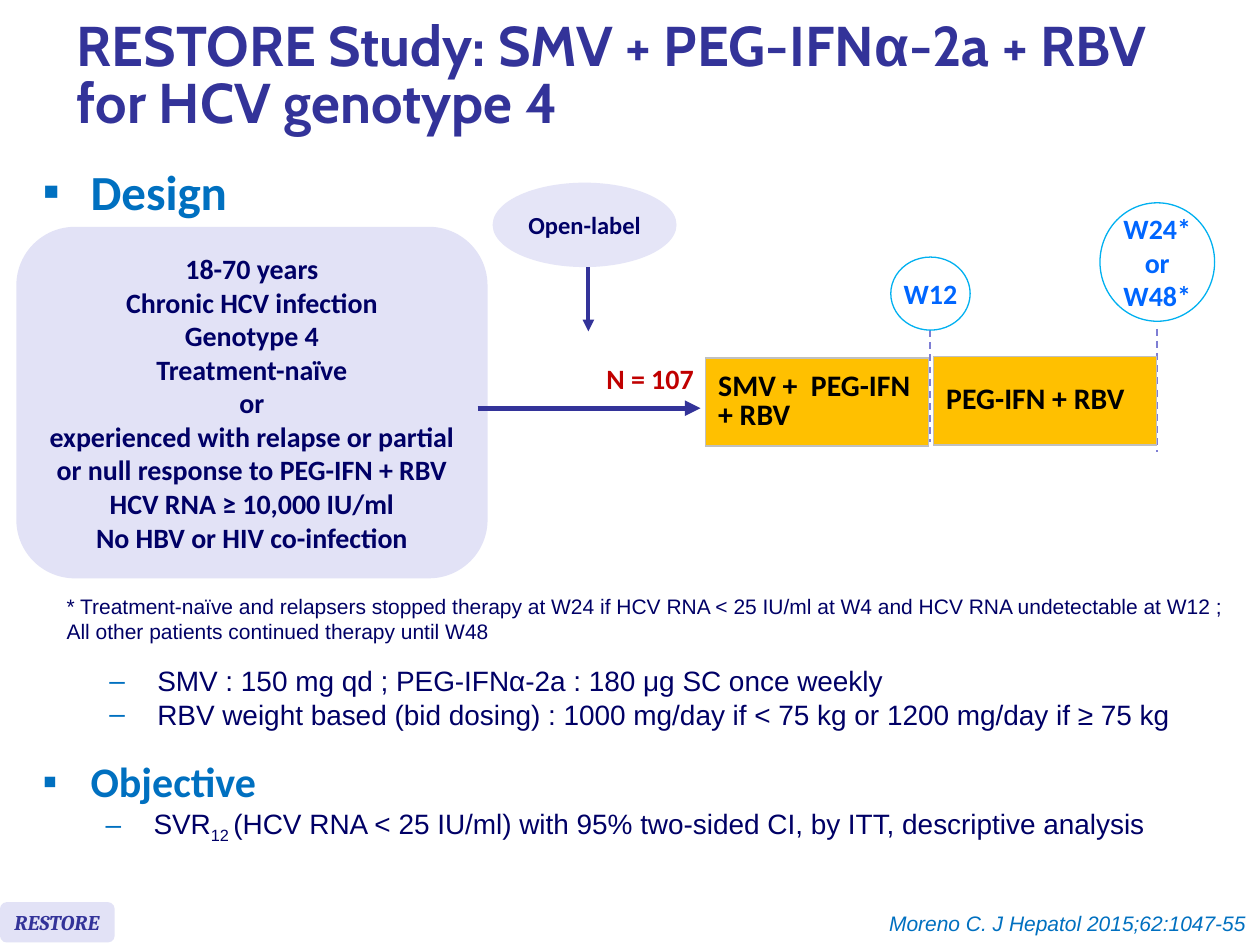
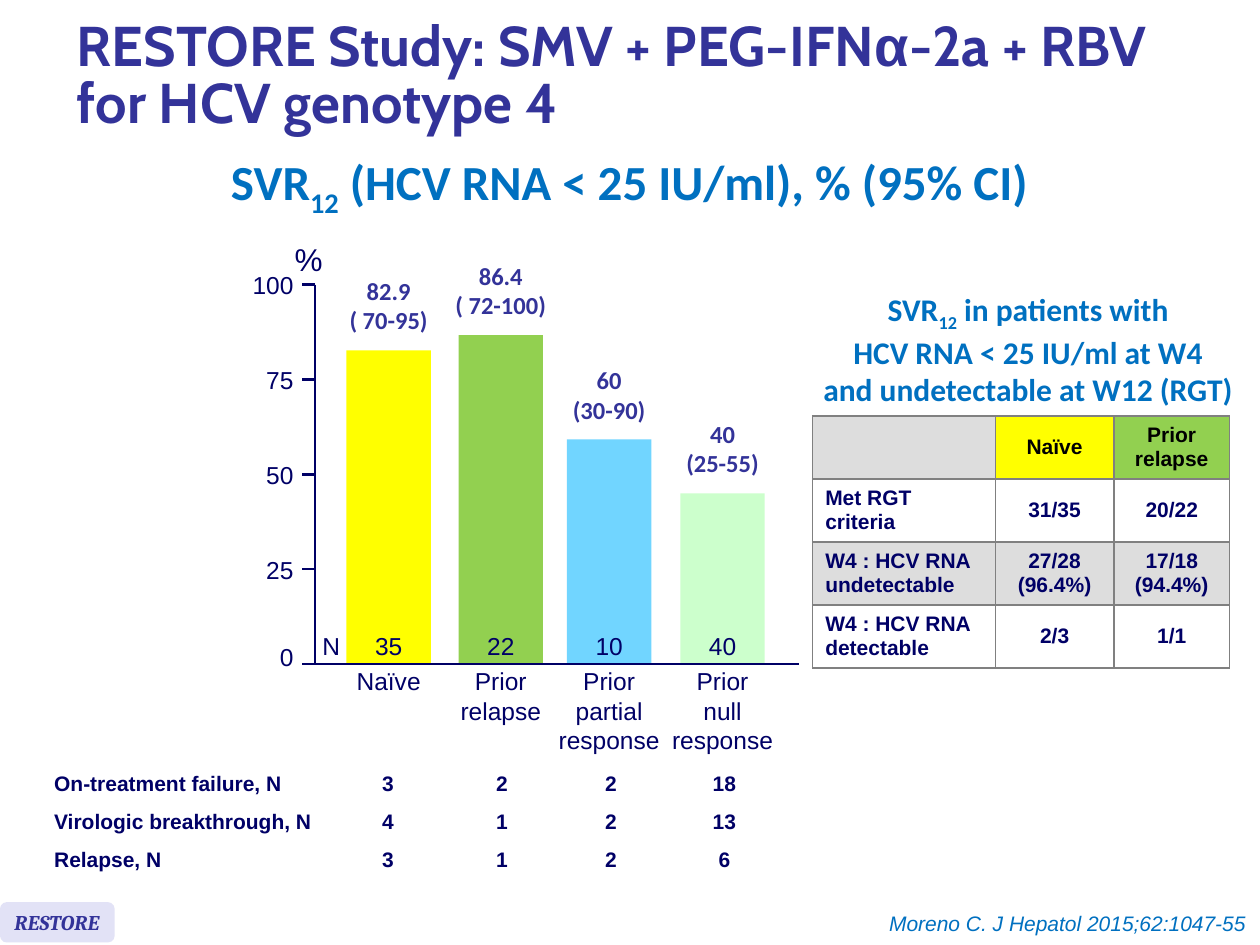
"""Build two slides on the RESTORE study: its design and its SVR12 results."""
import pptx
import pptx.dml.color
import pptx.enum.dml
import pptx.enum.shapes
import pptx.enum.text
import pptx.oxml
import pptx.oxml.ns
import pptx.util

COLORS = {
    "indigo": "333399", "navy": "000066", "blue": "0070C0", "bright": "0066FF", "cyan": "00B0F0",
    "dash": "7E7ED4", "lavender": "E2E2F6", "pale": "E5E5F7", "amber": "FFC000", "red": "C00000",
    "yellow": "FFFF00", "green": "92D050", "sky": "71D5FF", "mint": "CCFFCC", "silver": "C0C0C0",
    "grey": "808080", "light": "DDDDDD", "white": "FFFFFF", "black": "000000",
}
UNIT = pptx.util.Inches(0.1)
SLIDE_COLUMNS, SLIDE_ROWS = 100, 75
SUBSCRIPT = {"baseline": -25}
BODY = {"size": 16, "font": "Arial", "color": "navy"}
SMALL = {**BODY, "size": 12}
AXIS_TEXT = {**BODY, "size": 14}
STRONG = {"size": 16, "font": "Calibri", "bold": True}
HEADING = {**STRONG, "color": "blue"}
SQUARE_BULLET = {"bullet": "▪", "indent": 3.8}
DASH_BULLET = {"bullet": "–", "indent": 8.8, "level": 1}

TITLE = [["RESTORE Study: SMV + PEG-IFN", ("α", {"font": "Arial"}), "-2a + RBV for HCV genotype 4"]]
STUDY_TAG = ["RESTORE"]
REFERENCE = ["Moreno C. J Hepatol 2015;62:1047-55"]

POPULATION = [
    "18-70 years", "Chronic HCV infection", "Genotype 4", "Treatment-naïve", "or",
    "experienced with relapse or partial", "or null response to PEG-IFN + RBV",
    "HCV RNA ≥ 10,000 IU/ml", "No HBV or HIV co-infection",
]
TREATMENTS = [("SMV +  PEG-IFN + RBV", 56, 28.4), ("PEG-IFN + RBV", 74.1, 28.3)]
MILESTONES = [
    (["W12"], (70.7, 20.4, 6.3, 5.8), (73.8, 26.2, 35.1)),
    (["W24*", "or", "W48*"], (87.3, 16.1, 9.1, 9.4), (91.8, 26.1, 35.9)),
]
STOPPING_RULE = [
    "* Treatment-naïve and relapsers stopped therapy at W24 if HCV RNA < 25 IU/ml at W4 "
    "and HCV RNA undetectable at W12 ; All other patients continued therapy until W48"
]
DOSING = [
    "SMV : 150 mg qd ; PEG-IFNα-2a : 180 μg SC once weekly",
    "RBV weight based (bid dosing) : 1000 mg/day if < 75 kg or 1200 mg/day if ≥ 75 kg",
]
ENDPOINT = [[
    "SVR", ("12 ", SUBSCRIPT),
    "(HCV RNA < 25 IU/ml) with 95% two-sided CI, by ITT, descriptive analysis",
]]

CHART_HEADING = [["SVR", ("12", SUBSCRIPT), " (HCV RNA < 25 IU/ml), % (95% CI)"]]
RESPONSE_BARS = [
    {"center": 30.85, "height": 82.7, "color": "yellow", "rate": ["82.9", "( 70-95)"],
     "patients": "35", "name": ["Naïve"]},
    {"center": 39.75, "height": 86.7, "color": "green", "rate": ["86.4", "( 72-100)"],
     "patients": "22", "name": ["Prior", "relapse"]},
    {"center": 48.35, "height": 59.2, "color": "sky", "rate": ["60", "(30-90)"],
     "patients": "10", "name": ["Prior", "partial", "response"]},
    {"center": 57.35, "height": 45, "color": "mint", "rate": ["40", "(25-55)"],
     "patients": "40", "name": ["Prior", "null", "response"]},
]
TICKS = (0, 25, 50, 75, 100)
BASELINE, PERCENT, BAR_WIDTH = 52.7, 0.301, 6.7
AXIS_LEFT, AXIS_X, AXIS_RIGHT = 24, 25, 63.4

FAILURES = [
    ("On-treatment failure, N", "3", "2", "2", "18"),
    ("Virologic breakthrough, N", "4", "1", "2", "13"),
    ("Relapse, N", "3", "1", "2", "6"),
]
RGT_HEADING = [
    ["SVR", ("12", SUBSCRIPT), " in patients with"],
    "HCV RNA < 25 IU/ml at W4", "and undetectable at W12 (RGT)",
]
RGT_RESULTS = [
    ("", "Naïve", "Prior relapse"),
    ("Met RGT criteria", "31/35", "20/22"),
    ("W4 : HCV RNA undetectable", "27/28\n(96.4%)", "17/18\n(94.4%)"),
    ("W4 : HCV RNA detectable", "2/3", "1/1"),
]
RGT_FILLS = [("light", "yellow", "green"), ("white",) * 3, ("light",) * 3, ("white",) * 3]


def units(*lengths):
    """Turn grid units into slide lengths."""
    return [pptx.util.Emu(round(length * UNIT)) for length in lengths]


def rgb(name):
    """Look up a colour by name."""
    return pptx.dml.color.RGBColor.from_string(COLORS[name])


def add_xml(parent, tag, content="", **attributes):
    """Append a DrawingML element to a parent."""
    values = " ".join(f'{key}="{value}"' for key, value in attributes.items())
    namespace = pptx.oxml.ns.nsdecls("a")
    parent.append(pptx.oxml.parse_xml(f"<a:{tag} {namespace} {values}>{content}</a:{tag}>"))


def write_text(frame, lines, size=16, font="Arial", color="navy", bold=False, italic=False,
               align="LEFT", spacing=None, bullet=None, indent=0, level=0):
    """Add paragraphs of plain or mixed runs to a text frame."""
    for line in lines:
        paragraph = frame.add_paragraph() if frame.text else frame.paragraphs[0]
        paragraph.level = level
        if bullet:
            properties = paragraph._p.get_or_add_pPr()
            properties.set("marL", str(units(indent)[0]))
            properties.set("indent", str(units(-3.8)[0]))
            add_xml(properties, "buClr", f'<a:srgbClr val="{COLORS["blue"]}"/>')
            add_xml(properties, "buFont", typeface="Arial")
            add_xml(properties, "buChar", char=bullet)
        paragraph.alignment = getattr(pptx.enum.text.PP_ALIGN, align)
        paragraph.space_before = pptx.util.Pt(0)
        if spacing:
            paragraph.line_spacing = spacing
        for part in [line] if isinstance(line, str) else line:
            text, changes = (part, {}) if isinstance(part, str) else part
            run = paragraph.add_run()
            run.text = text
            run.font.size = pptx.util.Pt(size)
            run.font.name = changes.get("font", font)
            run.font.bold, run.font.italic = bold, italic
            run.font.color.rgb = rgb(color)
            if "baseline" in changes:
                run._r.get_or_add_rPr().set("baseline", str(changes["baseline"] * 1000))


def set_frame(frame, wrap=False, middle=False, margins=(1, 0.5)):
    """Set wrapping, anchor and margins of a text frame."""
    anchors = pptx.enum.text.MSO_ANCHOR
    frame.auto_size = pptx.enum.text.MSO_AUTO_SIZE.NONE
    frame.word_wrap = wrap
    frame.vertical_anchor = anchors.MIDDLE if middle else anchors.TOP
    frame.margin_left, frame.margin_top = units(*margins)
    frame.margin_right, frame.margin_bottom = units(*margins)


def add_text(slide, box, lines, wrap=False, middle=False, margins=(1, 0.5), **text_format):
    """Add a text box and return its frame."""
    frame = slide.shapes.add_textbox(*units(*box)).text_frame
    set_frame(frame, wrap, middle, margins)
    write_text(frame, lines, **text_format)
    return frame


def add_shape(slide, kind, box, fill, lines=(), outline=None, margins=(1, 0.5), **text_format):
    """Add a filled preset shape with optional outline and text."""
    preset = getattr(pptx.enum.shapes.MSO_SHAPE, kind)
    shape = slide.shapes.add_shape(preset, *units(*box))
    shape.shadow.inherit = False
    shape.fill.solid()
    shape.fill.fore_color.rgb = rgb(fill)
    if outline:
        shape.line.color.rgb = rgb(outline)
        shape.line.width = pptx.util.Pt(0.75)
    else:
        shape.line.fill.background()
    set_frame(shape.text_frame, middle=True, margins=margins)
    write_text(shape.text_frame, lines, **text_format)


def add_line(slide, start, end, color="navy", width=1.5, dashed=False, arrow=False):
    """Add a straight line, dashed or with an arrowhead if asked."""
    straight = pptx.enum.shapes.MSO_CONNECTOR.STRAIGHT
    line = slide.shapes.add_connector(straight, *units(*start, *end))
    line.line.color.rgb = rgb(color)
    line.line.width = pptx.util.Pt(width)
    if dashed:
        line.line.dash_style = pptx.enum.dml.MSO_LINE.DASH
    if arrow:
        add_xml(line.line._get_or_add_ln(), "tailEnd", type="triangle")
    add_xml(line._element.spPr, "effectLst")


def add_table(slide, position, widths, row_height, rows, fills=None, border=None, middle=True,
              colors=None, **text_format):
    """Add a table whose first column is left-aligned."""
    box = (*position, sum(widths), row_height * len(rows))
    table = slide.shapes.add_table(len(rows), len(widths), *units(*box)).table
    table.first_row = table.horz_banding = False
    for column, width in zip(table.columns, units(*widths)):
        column.width = width
    for row_index, row in enumerate(rows):
        for column_index, text in enumerate(row):
            cell = table.cell(row_index, column_index)
            if middle:
                cell.vertical_anchor = pptx.enum.text.MSO_ANCHOR.MIDDLE
            write_text(cell.text_frame, text.split("\n"), align="CENTER" if column_index else "LEFT",
                       color=colors[row_index] if colors else "navy", **text_format)
            if border:
                content = f'<a:solidFill><a:srgbClr val="{COLORS[border]}"/></a:solidFill>'
                for side in ("lnL", "lnR", "lnT", "lnB"):
                    add_xml(cell._tc.get_or_add_tcPr(), side, content, w=12700)
            if fills:
                cell.fill.solid()
                cell.fill.fore_color.rgb = rgb(fills[row_index][column_index])
            else:
                cell.fill.background()


def add_study_slide(presentation):
    """Add a slide with the shared title, study tag and reference."""
    slide = presentation.slides.add_slide(presentation.slide_layouts[5])
    title = slide.shapes.title
    title.left, title.top, title.width, title.height = units(5.1, 0.8, 91.3, 10.7)
    set_frame(title.text_frame, wrap=True, middle=True)
    write_text(title.text_frame, TITLE, size=32, font="Cabin", color="indigo", bold=True, spacing=0.85)
    add_shape(slide, "ROUNDED_RECTANGLE", (0, 71.6, 9.1, 3.2), "lavender", STUDY_TAG, size=12,
              font="Cambria", color="indigo", bold=True, italic=True)
    add_text(slide, (68.5, 71.8, 31.4, 3), REFERENCE, size=12, color="blue", italic=True, align="RIGHT")
    return slide


def build_design(presentation):
    """Build the slide on study design and objective."""
    slide = add_study_slide(presentation)
    add_text(slide, (2.4, 12.3, 19.8, 6.3), ["Design"], wrap=True,
             **{**HEADING, "size": 28}, **SQUARE_BULLET)
    add_shape(slide, "ROUNDED_RECTANGLE", (1.3, 18, 37.4, 27.9), "lavender", POPULATION,
              align="CENTER", color="navy", **STRONG)
    add_shape(slide, "OVAL", (39.1, 14.5, 14.6, 6.7), "pale", ["Open-label"], margins=(0, 0),
              align="CENTER", color="navy", **{**STRONG, "size": 14})
    add_line(slide, (46.7, 21.2), (46.7, 26.3), "indigo", 2.25, arrow=True)
    add_line(slide, (37.9, 32.4), (55.6, 32.4), "indigo", 3, arrow=True)
    add_text(slide, (47.1, 28.2, 9, 3.7), ["N = 107"], align="CENTER", color="red", **STRONG)
    for lines, circle, (x, top, bottom) in MILESTONES:
        add_line(slide, (x, top), (x, bottom), "dash", 1, dashed=True)
        add_shape(slide, "OVAL", circle, "white", lines, outline="cyan", align="CENTER",
                  color="bright", **STRONG)
    for text, left, top in TREATMENTS:
        add_table(slide, (left, top), [17.7], 7, [[text]], fills=[["amber"]], border="silver",
                  colors=["black"], spacing=0.8, **{**STRONG, "size": 17})
    add_text(slide, (4.3, 46.6, 94.5, 5), STOPPING_RULE, wrap=True, **SMALL)
    add_text(slide, (2.7, 52.2, 96.1, 6.4), DOSING, wrap=True, **BODY, **DASH_BULLET)
    objective = add_text(slide, (2.4, 59.5, 91.5, 12.6), ["Objective"], wrap=True,
                         **{**HEADING, "size": 24}, **SQUARE_BULLET)
    write_text(objective, ENDPOINT, **BODY, **DASH_BULLET)


def build_response_chart(slide):
    """Draw the response bars, their labels and the percent axis."""
    for bar in RESPONSE_BARS:
        center, height = bar["center"], bar["height"] * PERCENT
        top = BASELINE - height
        add_shape(slide, "RECTANGLE", (center - BAR_WIDTH / 2, top, BAR_WIDTH, height), bar["color"])
        add_text(slide, (center - 4.5, top - 6.9, 9, 6.7), bar["rate"], margins=(1, 1),
                 align="CENTER", color="indigo", **{**STRONG, "size": 14})
        add_text(slide, (center - 2.1, 49.6, 4.2, 3.4), [bar["patients"]], align="CENTER", **AXIS_TEXT)
        add_text(slide, (center - 5, 52.4, 10, 8.1), bar["name"], align="CENTER", **AXIS_TEXT)
    for tick in TICKS:
        y = BASELINE - tick * PERCENT
        label_y = y if tick else y - 0.6
        add_line(slide, (AXIS_LEFT, y), (AXIS_X if tick else AXIS_RIGHT, y))
        add_text(slide, (20, label_y - 1.2, 3.3, 2.4), [str(tick)], middle=True, margins=(0, 0),
                 align="RIGHT", **AXIS_TEXT)
    add_line(slide, (AXIS_X, BASELINE - 100 * PERCENT), (AXIS_X, BASELINE))
    add_text(slide, (22.4, 18.6, 4.2, 4), ["%"], **{**BODY, "size": 18})
    add_text(slide, (24.6, 49.6, 3.4, 3.4), ["N"], **AXIS_TEXT)


def build_results(presentation):
    """Build the slide on response rates."""
    slide = add_study_slide(presentation)
    add_text(slide, (16.8, 13.6, 66.3, 4.6), CHART_HEADING, align="CENTER",
             spacing=pptx.util.Pt(23.6), **{**HEADING, "size": 28})
    build_response_chart(slide)
    add_table(slide, (3.3, 60.8), [22.8, 9.4, 8.7, 8.6, 9.4], 3, FAILURES, middle=False,
              size=12, bold=True)
    add_text(slide, (64.1, 22.5, 35, 10.1), RGT_HEADING, align="CENTER", **{**HEADING, "size": 18})
    add_table(slide, (64.5, 33), [14.5, 9.4, 9.2], 5, RGT_RESULTS, fills=RGT_FILLS, border="grey",
              colors=["black"] + ["navy"] * 3, size=12, bold=True)


def main():
    """Build and save the presentation."""
    presentation = pptx.Presentation()
    presentation.slide_width, presentation.slide_height = units(SLIDE_COLUMNS, SLIDE_ROWS)
    build_design(presentation)
    build_results(presentation)
    presentation.save("out.pptx")


if __name__ == "__main__":
    main()
